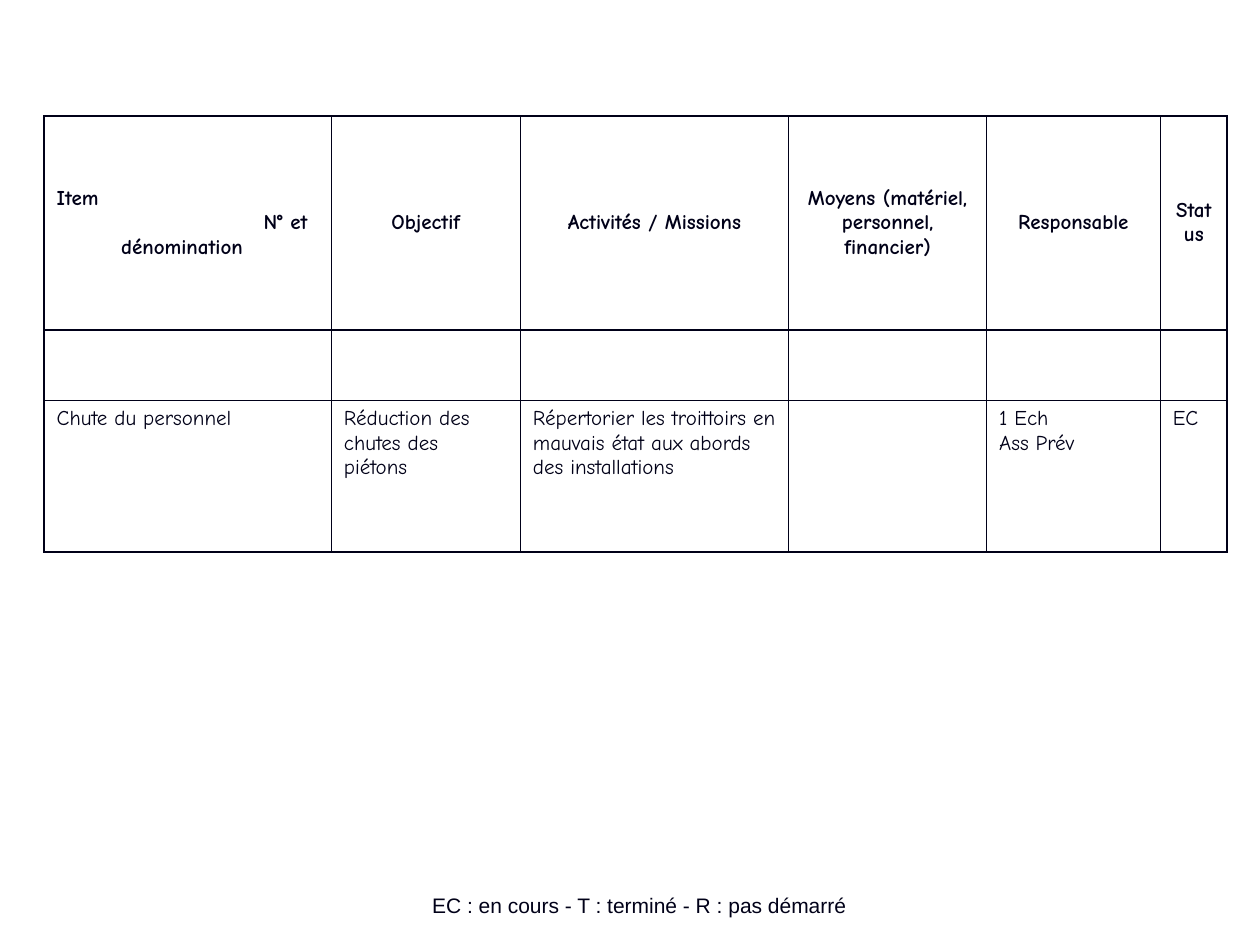
"""Build the action plan slide with its status legend."""
import pptx
import pptx.util
import pptx.dml.color
import pptx.enum.text
import pptx.oxml
import pptx.oxml.ns
from pptx.util import Inches

COLORS = {"ink": "000018"}
ALIGN = pptx.enum.text.PP_ALIGN
ANCHOR = pptx.enum.text.MSO_ANCHOR
COLUMN_WIDTHS = [2.28, 1.5, 2.13, 1.57, 1.38, 0.53]
ROW_HEIGHTS = [1.7, 0.56, 1.2]
HEADINGS = [
    [("Item", ALIGN.LEFT), ("N° et", ALIGN.RIGHT), ("dénomination", ALIGN.CENTER)],
    [("Objectif", ALIGN.CENTER)],
    [("Activités / Missions", ALIGN.CENTER)],
    [("Moyens (matériel, personnel, financier)", ALIGN.CENTER)],
    [("Responsable", ALIGN.CENTER)],
    [("Status", ALIGN.CENTER)],
]
ACTION = [
    ["Chute du personnel"],
    ["Réduction des chutes des piétons"],
    ["Répertorier les troittoirs en mauvais état aux abords des installations"],
    [],
    ["1 Ech", "Ass Prév"],
    ["EC"],
]


def write_lines(frame, lines, font_name, bold=False):
    """Write each (text, alignment) pair as one paragraph."""
    for index, (text, alignment) in enumerate(lines):
        paragraph = frame.add_paragraph() if index else frame.paragraphs[0]
        paragraph.alignment = alignment
        run = paragraph.add_run()
        run.text = text
        run.font.name = font_name
        run.font.size = pptx.util.Pt(12)
        run.font.bold = bold
        run.font.color.rgb = pptx.dml.color.RGBColor.from_string(COLORS["ink"])


def outline_cell(cell):
    """Clear the cell's fill and draw a one-point border on each side."""
    cell.fill.background()
    properties = cell._tc.get_or_add_tcPr()
    for index, side in enumerate(("lnL", "lnR", "lnT", "lnB")):
        border = pptx.oxml.parse_xml(
            f'<a:{side} {pptx.oxml.ns.nsdecls("a")} w="12700"><a:solidFill>'
            f'<a:srgbClr val="{COLORS["ink"]}"/></a:solidFill></a:{side}>'
        )
        properties.insert(index, border)


def add_action_table(slide):
    """Add the table of actions with its headings."""
    table = slide.shapes.add_table(
        len(ROW_HEIGHTS), len(COLUMN_WIDTHS), Inches(0.35), Inches(0.92),
        Inches(sum(COLUMN_WIDTHS)), Inches(sum(ROW_HEIGHTS)),
    ).table
    table.first_row = False
    table.horz_banding = False
    for column, width in zip(table.columns, COLUMN_WIDTHS):
        column.width = Inches(width)
    for row, height in zip(table.rows, ROW_HEIGHTS):
        row.height = Inches(height)
    for cell in table.iter_cells():
        outline_cell(cell)
    for index, (heading, entry) in enumerate(zip(HEADINGS, ACTION)):
        heading_cell = table.cell(0, index)
        heading_cell.vertical_anchor = ANCHOR.MIDDLE
        write_lines(heading_cell.text_frame, heading, "Comic Neue", bold=True)
        lines = [(text, ALIGN.LEFT) for text in entry]
        write_lines(table.cell(2, index).text_frame, lines, "Comic Neue")
    table.cell(0, 0).margin_right = Inches(0.19)
    status_heading = table.cell(0, len(HEADINGS) - 1)
    status_heading._tc.get_or_add_tcPr().set("vert", "eaVert")


def add_legend(slide):
    """Add the legend of the status codes."""
    legend = slide.shapes.add_textbox(
        Inches(2.32), Inches(6.83), Inches(5.51), Inches(0.5)
    ).text_frame
    legend.word_wrap = True
    legend.vertical_anchor = ANCHOR.BOTTOM
    text = "EC : en cours - T : terminé - R : pas démarré"
    write_lines(legend, [(text, ALIGN.CENTER)], "Arial")


def main():
    """Build and save the slide."""
    deck = pptx.Presentation()
    deck.slide_width = Inches(10)
    deck.slide_height = Inches(7.5)
    slide = deck.slides.add_slide(deck.slide_layouts[6])
    add_legend(slide)
    add_action_table(slide)
    deck.save("out.pptx")


if __name__ == "__main__":
    main()
